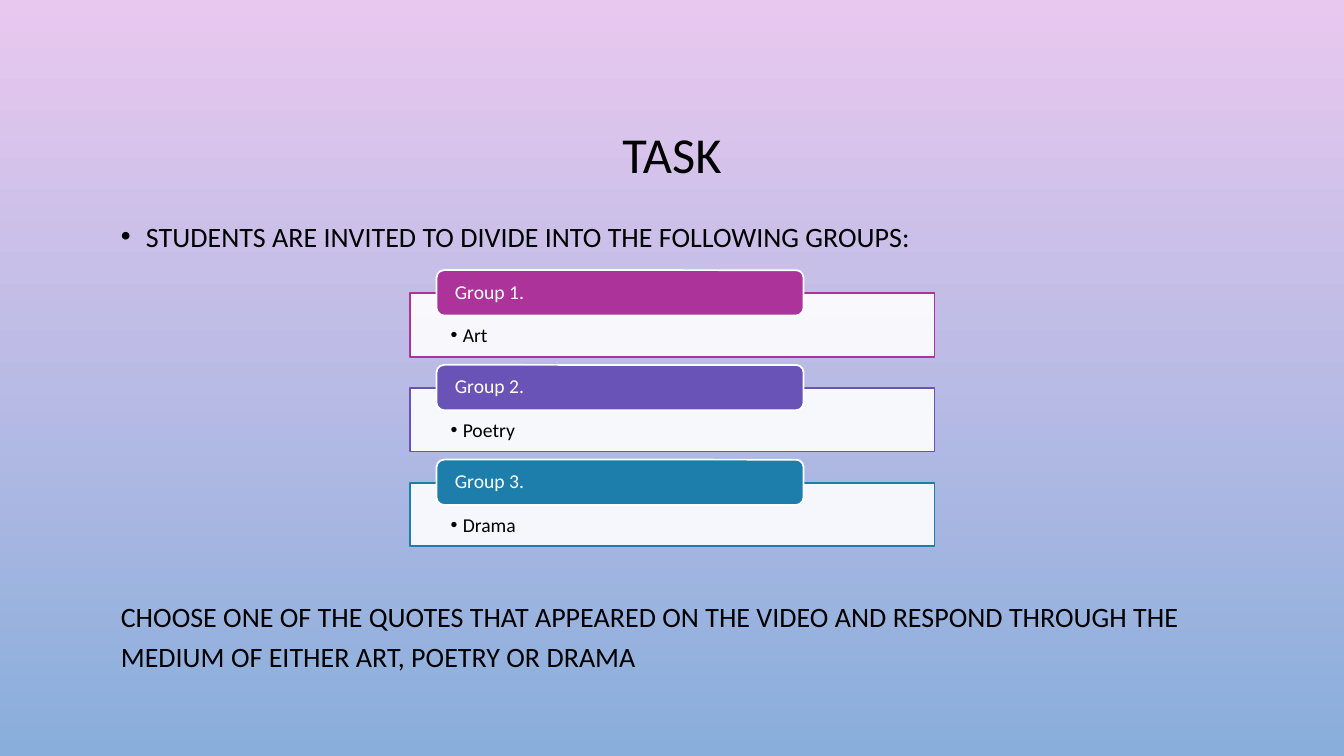
from dataclasses import dataclass

import lxml.etree
import pptx
import pptx.dml.color
import pptx.enum.shapes
import pptx.enum.text
import pptx.oxml.ns
import pptx.util

Inches = pptx.util.Inches
RGB = pptx.dml.color.RGBColor.from_string
Align = pptx.enum.text.PP_ALIGN
Anchor = pptx.enum.text.MSO_ANCHOR
Preset = pptx.enum.shapes.MSO_SHAPE


@dataclass(frozen=True)
class Theme:
    font: str = "Calibri"
    ink: str = "000000"
    paper: str = "FFFFFF"
    sky: tuple[str, str] = ("E9C8EF", "89AEDB")
    title_size: int = 36
    body_size: int = 20
    group_size: int = 14
    outline: float = 1.25
    panel_opacity: int = 90


@dataclass(frozen=True)
class Group:
    label: str
    medium: str
    color: str


@dataclass(frozen=True)
class TextStyle:
    size: int
    color: str
    spacing: float
    anchor: Anchor = Anchor.TOP
    align: Align = Align.LEFT
    insets: tuple[float, float, float, float] = (0.1, 0.05, 0.1, 0.05)
    bullet_indent: float = 0


THEME = Theme()
GROUPS = [
    Group("Group 1.", "Art", "AC339A"),
    Group("Group 2.", "Poetry", "6953B7"),
    Group("Group 3.", "Drama", "1D7EAB"),
]
FIRST_TAB_TOP, GROUP_PITCH, PANEL_DROP = 2.68, 0.94, 0.23

TITLE = TextStyle(THEME.title_size, THEME.ink, 0.9, Anchor.MIDDLE, Align.CENTER)
BODY = TextStyle(THEME.body_size, THEME.ink, 1.2)
BODY_BULLET = TextStyle(THEME.body_size, THEME.ink, 1.2, bullet_indent=0.25)
PANEL = TextStyle(THEME.group_size, THEME.ink, 0.9,
                  insets=(0.4, 0.32, 0.4, 0.11), bullet_indent=0.12)
TAB = TextStyle(THEME.group_size, THEME.paper, 0.9, Anchor.MIDDLE,
                insets=(0.16, 0.02, 0.16, 0.02))


def set_all(target: object, values: dict) -> None:
    for name, value in values.items():
        setattr(target, name, value)


def add_bullet(para, indent: float) -> None:
    properties = para._p.get_or_add_pPr()
    properties.set("marL", str(Inches(indent)))
    properties.set("indent", str(-Inches(indent)))
    for tag, key, value in (("a:buFont", "typeface", "Arial"), ("a:buChar", "char", "•")):
        mark = lxml.etree.SubElement(properties, pptx.oxml.ns.qn(tag))
        mark.set(key, value)


def write(shape, text: str, style: TextStyle) -> None:
    frame = shape.text_frame
    left, top, right, bottom = (Inches(inset) for inset in style.insets)
    set_all(frame, {
        "word_wrap": True, "vertical_anchor": style.anchor,
        "margin_left": left, "margin_top": top,
        "margin_right": right, "margin_bottom": bottom,
    })
    para = frame.paragraphs[0]
    if style.bullet_indent:
        add_bullet(para, style.bullet_indent)
    set_all(para, {"alignment": style.align, "line_spacing": style.spacing})
    span = para.add_run()
    span.text = text
    set_all(span.font, {"name": THEME.font, "size": pptx.util.Pt(style.size)})
    span.font.color.rgb = RGB(style.color)


def add_text(page, place: tuple, text: str, style: TextStyle) -> None:
    box = page.shapes.add_textbox(*(Inches(length) for length in place))
    write(box, text, style)


def add_box(page, preset: Preset, place: tuple, fill: str, line: str,
            opacity: int = 100):
    box = page.shapes.add_shape(preset, *(Inches(length) for length in place))
    box.shadow.inherit = False
    box.fill.solid()
    box.fill.fore_color.rgb = RGB(fill)
    box.line.color.rgb = RGB(line)
    box.line.width = pptx.util.Pt(THEME.outline)
    if opacity < 100:
        color = box._element.spPr.find(".//" + pptx.oxml.ns.qn("a:srgbClr"))
        alpha = lxml.etree.SubElement(color, pptx.oxml.ns.qn("a:alpha"))
        alpha.set("val", str(opacity * 1000))
    return box


def add_group(page, group: Group, top: float) -> None:
    panel = add_box(page, Preset.RECTANGLE, (4.07, top + PANEL_DROP, 5.2, 0.63),
                    THEME.paper, group.color, THEME.panel_opacity)
    write(panel, group.medium, PANEL)
    tab = add_box(page, Preset.ROUNDED_RECTANGLE, (4.33, top, 3.64, 0.45),
                  group.color, THEME.paper)
    write(tab, group.label, TAB)


def paint_background(page) -> None:
    fill = page.background.fill
    fill.gradient()
    fill.gradient_angle = 270
    for position, (stop, color) in enumerate(zip(fill.gradient_stops, THEME.sky)):
        stop.position = position
        stop.color.rgb = RGB(color)


def main() -> None:
    deck = pptx.Presentation()
    set_all(deck, {"slide_width": Inches(13.33), "slide_height": Inches(7.5)})
    page = deck.slides.add_slide(deck.slide_layouts[6])
    paint_background(page)

    # Title and introduction
    add_text(page, (1, 0.68, 11.33, 1.75), "TASK", TITLE)
    add_text(page, (1.1, 2.06, 11.76, 0.5),
             "STUDENTS ARE INVITED TO DIVIDE INTO THE FOLLOWING GROUPS:", BODY_BULLET)

    # One panel with a tab for each group
    for index, group in enumerate(GROUPS):
        add_group(page, group, FIRST_TAB_TOP + index * GROUP_PITCH)

    # Closing instruction
    add_text(page, (1.1, 5.83, 11.4, 0.95),
             "CHOOSE ONE OF THE QUOTES THAT APPEARED ON THE VIDEO AND RESPOND "
             "THROUGH THE MEDIUM OF EITHER ART, POETRY OR DRAMA", BODY)

    deck.save("out.pptx")


if __name__ == "__main__":
    main()
